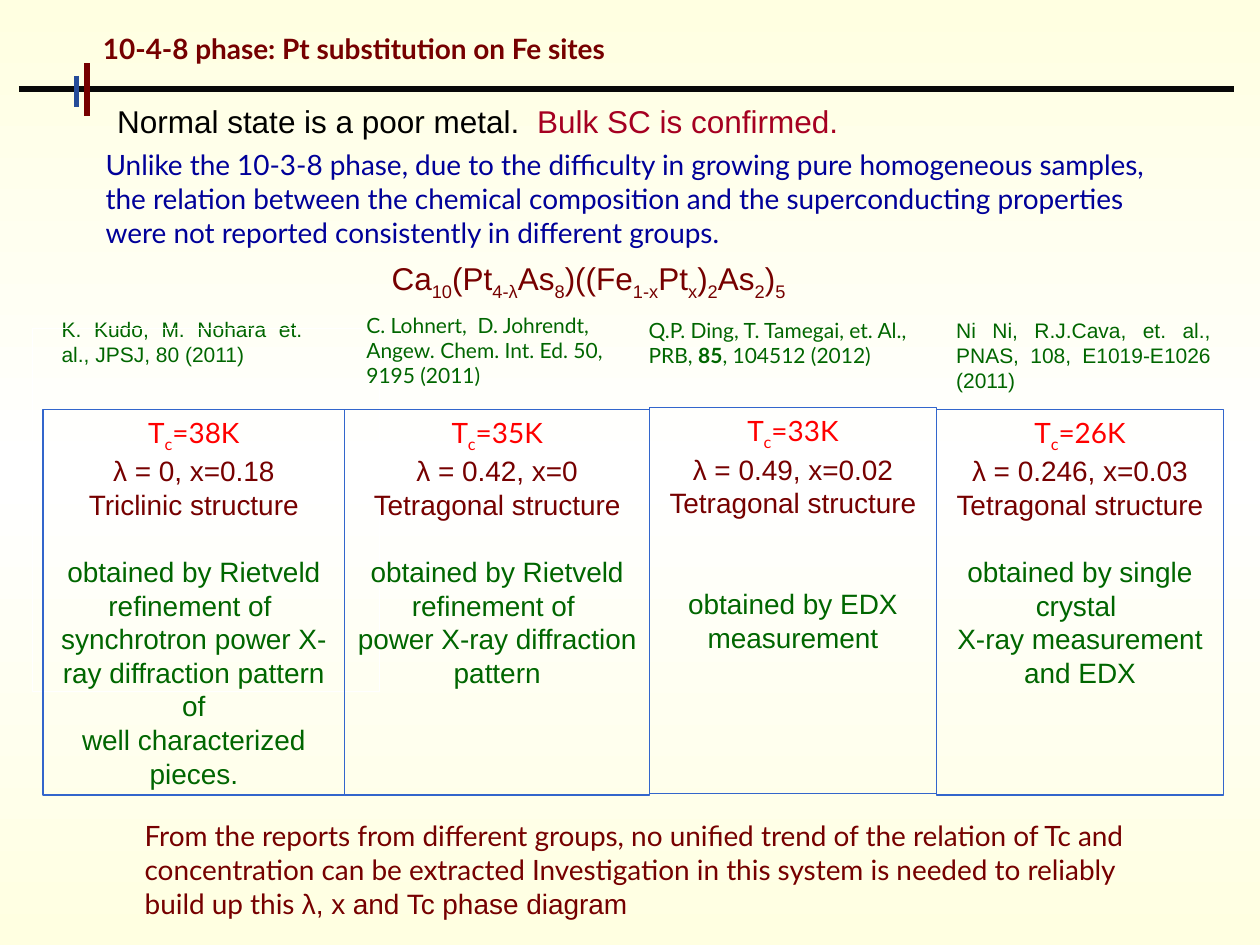
from lxml.etree import SubElement
from pptx import Presentation
from pptx.dml.color import RGBColor
from pptx.enum.shapes import MSO_CONNECTOR, MSO_SHAPE
from pptx.enum.text import MSO_ANCHOR, PP_ALIGN
from pptx.oxml.ns import qn
from pptx.util import Pt

COLORS = {
    "cream": "FFFFE1", "white": "FFFFFF", "rule": "080808", "tick": "264C99",
    "maroon": "760000", "navy": "000099", "black": "000000", "crimson": "A50021",
    "border": "3366CC", "red": "FF0000", "green": "006600",
}
SUBSCRIPT = "-25000"
LINE = 19.2  # height of one 16-point line


def color(name):
    return RGBColor.from_string(COLORS[name])


def set_background(page):
    fill = page.background.fill
    fill.gradient()
    fill.gradient_angle = 90
    stops = page.background._cSld.find(".//" + qn("a:gsLst"))
    for stop in list(stops):
        stops.remove(stop)
    for position, name in ((0, "cream"), (50000, "white"), (100000, "cream")):
        stop = SubElement(stops, qn("a:gs"), pos=str(position))
        SubElement(stop, qn("a:srgbClr"), val=COLORS[name])


def add_line(page, x1, y1, x2, y2, name, width):
    line = page.shapes.add_connector(
        MSO_CONNECTOR.STRAIGHT, Pt(x1), Pt(y1), Pt(x2), Pt(y2))
    line.line.color.rgb = color(name)
    line.line.width = Pt(width)
    SubElement(line._element.spPr, qn("a:effectLst"))


def add_frame(page, left, top, width, height, name):
    frame = page.shapes.add_shape(
        MSO_SHAPE.RECTANGLE, Pt(left), Pt(top), Pt(width), Pt(height))
    frame.shadow.inherit = False
    frame.fill.background()
    frame.line.color.rgb = color(name)
    frame.line.width = Pt(0.75)
    return frame


def style(span, name, font="Lato", size=16, bold=False):
    span.font.name = font
    span.font.size = Pt(size)
    span.font.bold = bold
    span.font.color.rgb = color(name)


def add_span(para, text, *look, **options):
    span = para.add_run()
    span.text = text
    style(span, *look, **options)
    return span


def add_formula(para, pieces, *look):
    """Every second piece is a subscript."""
    for index, text in enumerate(pieces):
        span = add_span(para, text, *look)
        if index % 2:
            span._r.get_or_add_rPr().set("baseline", SUBSCRIPT)


def add_box(page, left, top, width, height):
    box = page.shapes.add_textbox(Pt(left), Pt(top), Pt(width), Pt(height))
    box.text_frame.word_wrap = True
    return box.text_frame


def add_text(page, place, text, *look, align=PP_ALIGN.LEFT, **options):
    frame = add_box(page, *place)
    frame.text = text
    for para in frame.paragraphs:
        para.alignment = align
        for span in para.runs:
            style(span, *look, **options)
    return frame


def add_result(page, place, temperature, facts, method, gap_lines):
    """Framed column: critical temperature, composition, way of measuring."""
    frame = add_frame(page, *place, "border").text_frame
    frame.word_wrap = True
    frame.vertical_anchor = MSO_ANCHOR.TOP
    add_formula(frame.paragraphs[0], ("T", "c", f"={temperature}"), "red")
    for name, lines in (("maroon", facts), ("green", method)):
        for text in lines:
            add_span(frame.add_paragraph(), text, name, "Arial")
    for para in frame.paragraphs:
        para.alignment = PP_ALIGN.CENTER
    frame.paragraphs[1 + len(facts)].space_before = Pt(gap_lines * LINE)


def add_header(page):
    add_line(page, 10.8, 51.1, 704.9, 51.1, "rule", 3.5)
    add_line(page, 43.9, 43.2, 43.9, 61.2, "tick", 3)
    add_line(page, 49.7, 36, 49.7, 66.2, "maroon", 3)
    add_text(page, (51.8, 14.4, 668, 26.6),
             "10-4-8 phase: Pt substitution on Fe sites", "maroon", bold=True)


def add_introduction(page):
    add_text(page, (53.3, 81, 621, 65.5),
             "Unlike the 10-3-8 phase, due to the difficulty in growing pure "
             "homogeneous samples, the relation between the chemical composition "
             "and the superconducting properties were not reported consistently "
             "in different groups.", "navy")
    para = add_box(page, 59.8, 54.7, 558, 28.8).paragraphs[0]
    add_span(para, "Normal state is a poor metal.  ", "black", "Arial", 18)
    add_span(para, "Bulk SC is confirmed.", "crimson", "Arial", 18)
    para = add_box(page, 216.7, 144.7, 252, 28.8).paragraphs[0]
    add_formula(para, ("Ca", "10", "(Pt", "4-λ", "As", "8", ")((Fe", "1-x", "Pt",
                       "x", ")", "2", "As", "2", ")", "5"), "maroon", "Arial", 18)


def add_references(page):
    add_text(page, (28.1, 177.1, 151.9, 36), "K. Kudo, M. Nohara et. al., JPSJ, 80 (2011)",
             "green", "Arial", 12, align=PP_ALIGN.JUSTIFY)
    add_frame(page, 18.7, 187.9, 198, 207.4, "white")
    add_text(page, (202.3, 175, 168.5, 51.1),
             "C. Lohnert,  D. Johrendt, Angew. Chem. Int. Ed. 50, 9195 (2011)",
             "green", "Lato", 12)
    frame = add_text(page, (363.6, 177.8, 170.6, 36),
                     "Q.P. Ding, T. Tamegai, et. Al.,", "green", "Lato", 12)
    para = frame.add_paragraph()
    for text, bold in (("PRB, ", False), ("85", True), (", 104512 (2012)", False)):
        add_span(para, text, "green", size=12, bold=bold)
    add_text(page, (539.3, 177.8, 159.8, 51.1),
             "Ni Ni, R.J.Cava, et. al., PNAS, 108, E1019-E1026 (2011)",
             "green", "Arial", 12, align=PP_ALIGN.JUSTIFY)


def add_results(page):
    rietveld = "obtained by Rietveld refinement of "
    tetragonal = "Tetragonal structure"
    results = (
        (172.4, 234, "38K", ("λ = 0, x=0.18", "Triclinic structure"),
         (rietveld, "synchrotron power X-ray diffraction pattern of",
          "well characterized pieces."), 1),
        (174.2, 234, "35K", ("λ = 0.42, x=0", tetragonal),
         (rietveld, "power X-ray diffraction pattern"), 1),
        (163.8, 233, "33K", ("λ = 0.49, x=0.02", tetragonal),
         ("obtained by EDX measurement",), 2),
        (164.3, 234, "26K", ("λ = 0.246, x=0.03", tetragonal),
         ("obtained by single crystal ", "X-ray measurement and EDX"), 1),
    )
    left = 24.6
    for width, top, *content in results:
        add_result(page, (left, top, width, 220.3), *content)
        left += width


def add_conclusion(page):
    frame = add_text(page, (75.6, 464.4, 674.6, 65.5),
                     "From the reports from different groups, no unified trend of the "
                     "relation of Tc and concentration can be extracted Investigation in "
                     "this system is needed to reliably", "maroon")
    frame.paragraphs[0].alignment = PP_ALIGN.LEFT
    para = frame.add_paragraph()
    add_span(para, "build up this ", "maroon")
    add_span(para, "λ, x and Tc phase diagram", "maroon", "Arial")


def main():
    deck = Presentation()
    deck.slide_width, deck.slide_height = Pt(720), Pt(540)
    page = deck.slides.add_slide(deck.slide_layouts[6])
    set_background(page)
    add_header(page)
    add_introduction(page)
    add_references(page)
    add_results(page)
    add_conclusion(page)
    deck.save("out.pptx")


if __name__ == "__main__":
    main()
